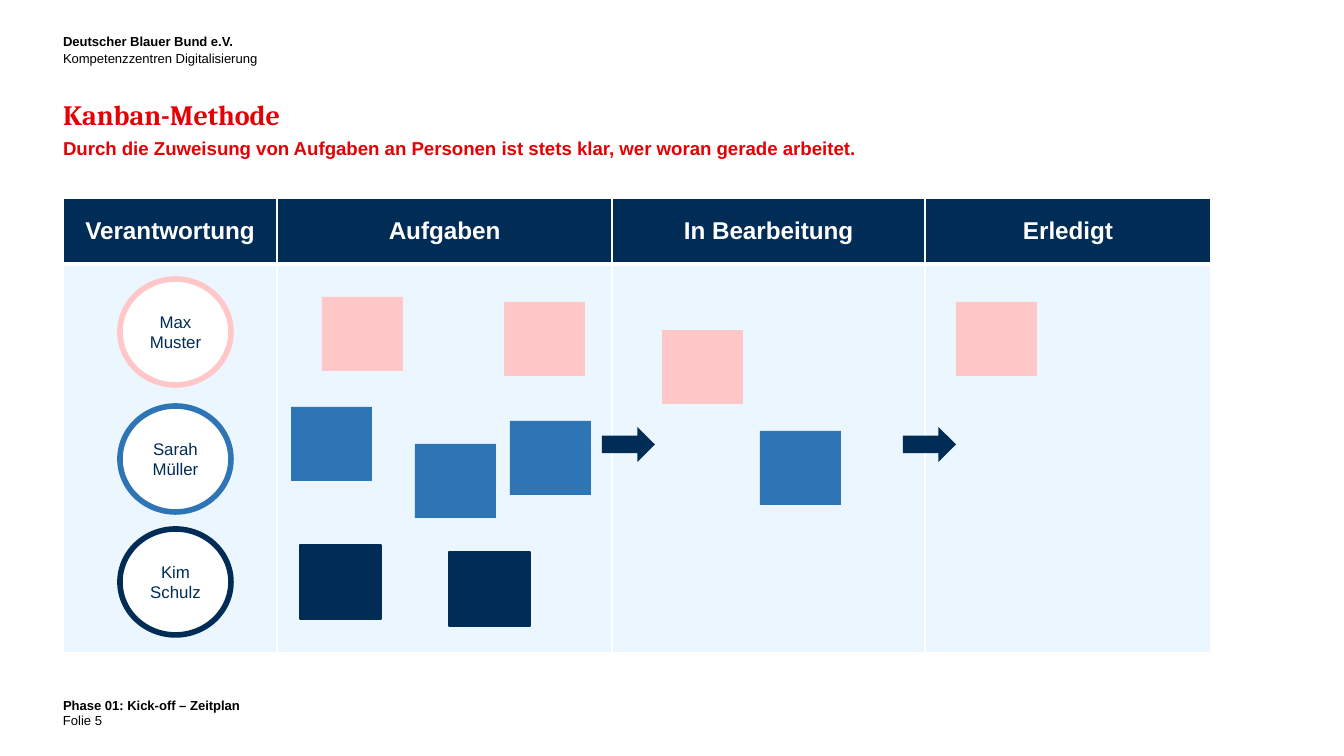
"""Build a Kanban board slide with owners, task cards and progress arrows."""
from lxml import etree
from pptx import Presentation, util as u
from pptx.dml.color import RGBColor
from pptx.enum import shapes, text
from pptx.oxml import ns

PX = 914400 / 134.4
NAVY = RGBColor(0x00, 0x2C, 0x55)
BLUE = RGBColor(0x2E, 0x75, 0xB6)
PINK = RGBColor(0xFF, 0xC7, 0xC8)
PALE = RGBColor(0xEC, 0xF6, 0xFF)
RED = RGBColor(0xE6, 0x00, 0x05)
WHITE = RGBColor(0xFF, 0xFF, 0xFF)
BLACK = RGBColor(0x00, 0x00, 0x00)
KINDS = shapes.MSO_SHAPE
TOP, MID, LOW = (text.MSO_ANCHOR.TOP, text.MSO_ANCHOR.MIDDLE,
                 text.MSO_ANCHOR.BOTTOM)
LEFT, MITTE = text.PP_ALIGN.LEFT, text.PP_ALIGN.CENTER


def px(*vals):
    return [u.Emu(round(val * PX)) for val in vals]


def assign(item, vals):
    for key, val in vals.items():
        setattr(item, key, val)


class Board:
    def __init__(self, deck):
        self.slide = deck.slides.add_slide(deck.slide_layouts[5])
        self.shapes = self.slide.shapes

    def style(self, run, size, color, bold=False, name="Arial"):
        assign(run.font, dict(size=u.Pt(size), bold=bold, name=name))
        run.font.color.rgb = color

    def frame(self, frame, anchor=TOP, inset=0):
        gap = px(inset)[0]
        assign(frame, dict(word_wrap=True, auto_size=text.MSO_AUTO_SIZE.NONE,
                           vertical_anchor=anchor, margin_left=gap,
                           margin_right=gap, margin_top=gap,
                           margin_bottom=gap))

    def title(self, box, head, sub):
        item = self.shapes.title
        assign(item, dict(zip(("left", "top", "width", "height"), px(*box))))
        self.frame(item.text_frame)
        para = item.text_frame.paragraphs[0]
        assign(para, dict(alignment=LEFT, line_spacing=u.Pt(15),
                          space_before=u.Pt(0)))
        run = para.add_run()
        run.text = head
        self.style(run, 15, RED, True, "Cambria")
        para.add_line_break()
        run = para.add_run()
        run.text = sub
        self.style(run, 10, RED, True)

    def note(self, box, lines, bold=False, anchor=TOP):
        frame = self.shapes.add_textbox(*px(*box)).text_frame
        self.frame(frame, anchor)
        for num, line in enumerate(lines):
            para = frame.add_paragraph() if num else frame.paragraphs[0]
            para.line_spacing = u.Pt(9)
            run = para.add_run()
            run.text = line
            self.style(run, 7, BLACK, bold and num == 0)

    def border(self, cell, low):
        props = cell._tc.get_or_add_tcPr()
        for side, width in (("L", 1), ("R", 1), ("T", 1), ("B", low)):
            line = etree.SubElement(props, ns.qn("a:ln" + side),
                                    w=str(u.Pt(width)))
            fill = etree.SubElement(line, ns.qn("a:solidFill"))
            etree.SubElement(fill, ns.qn("a:srgbClr"), val=str(WHITE))

    def table(self, left, top, cols, rows, heads):
        box = px(left, top, sum(cols), sum(rows))
        grid = self.shapes.add_table(len(rows), len(cols), *box).table
        for col, width in zip(grid.columns, px(*cols)):
            col.width = width
        for row, height in zip(grid.rows, px(*rows)):
            row.height = height
        for num, head in enumerate(heads):
            for row, color, low in ((0, NAVY, 3), (1, PALE, 1)):
                cell = grid.cell(row, num)
                self.border(cell, low)
                cell.fill.solid()
                cell.fill.fore_color.rgb = color
            cell = grid.cell(0, num)
            cell.vertical_anchor = MID
            para = cell.text_frame.paragraphs[0]
            para.alignment = MITTE
            run = para.add_run()
            run.text = head
            self.style(run, 13, WHITE, True)

    def shape(self, kind, box, fill, line=None, width=1):
        item = self.shapes.add_shape(kind, *px(*box))
        item.shadow.inherit = False
        item.fill.solid()
        item.fill.fore_color.rgb = fill
        if line is None:
            item.line.fill.background()
        else:
            item.line.color.rgb = line
            item.line.width = u.Pt(width)
        return item

    def owner(self, top, name, color):
        item = self.shape(KINDS.OVAL, (120, top, 111, 106), WHITE, color, 3)
        self.frame(item.text_frame, MID, 8)
        para = item.text_frame.paragraphs[0]
        para.alignment = MITTE
        run = para.add_run()
        run.text = name
        self.style(run, 9, NAVY)

    def card(self, left, top, color, line):
        self.shape(KINDS.RECTANGLE, (left, top, 81, 74), color, line)

    def arrow(self, left):
        self.shape(KINDS.RIGHT_ARROW, (left, 427, 53, 35), NAVY)


def main():
    deck = Presentation()
    deck.slide_width, deck.slide_height = px(1344, 756)
    board = Board(deck)
    board.title((63, 103, 1218, 50), "Kanban-Methode",
                "Durch die Zuweisung von Aufgaben an Personen ist stets klar, "
                "wer woran gerade arbeitet.")
    board.note((63, 32, 241, 34), ["Deutscher Blauer Bund e.V.",
                                   "Kompetenzzentren Digitalisierung"], True)
    board.note((63, 696, 1218, 12), ["Phase 01: Kick-off – Zeitplan"], True)
    board.note((63, 711, 40, 17), ["Folie"], anchor=LOW)
    board.note((95, 712, 302, 16), ["5"], anchor=LOW)
    board.table(63, 198, (214, 335, 313, 286), (66, 389),
                ("Verantwortung", "Aufgaben", "In Bearbeitung", "Erledigt"))
    team = (
        ("Max Muster", 279, PINK, None,
         ((322, 297), (504, 302), (662, 330), (956, 302))),
        ("Sarah Müller", 406, BLUE, None,
         ((291, 407), (415, 444), (510, 421), (760, 431))),
        ("Kim Schulz", 529, NAVY, NAVY, ((300, 545), (449, 552))),
    )
    for name, top, color, line, cards in team:
        board.owner(top, name, color)
        for left, high in cards:
            board.card(left, high, color, line)
    for left in (602, 903):
        board.arrow(left)
    deck.save("out.pptx")


if __name__ == "__main__":
    main()
